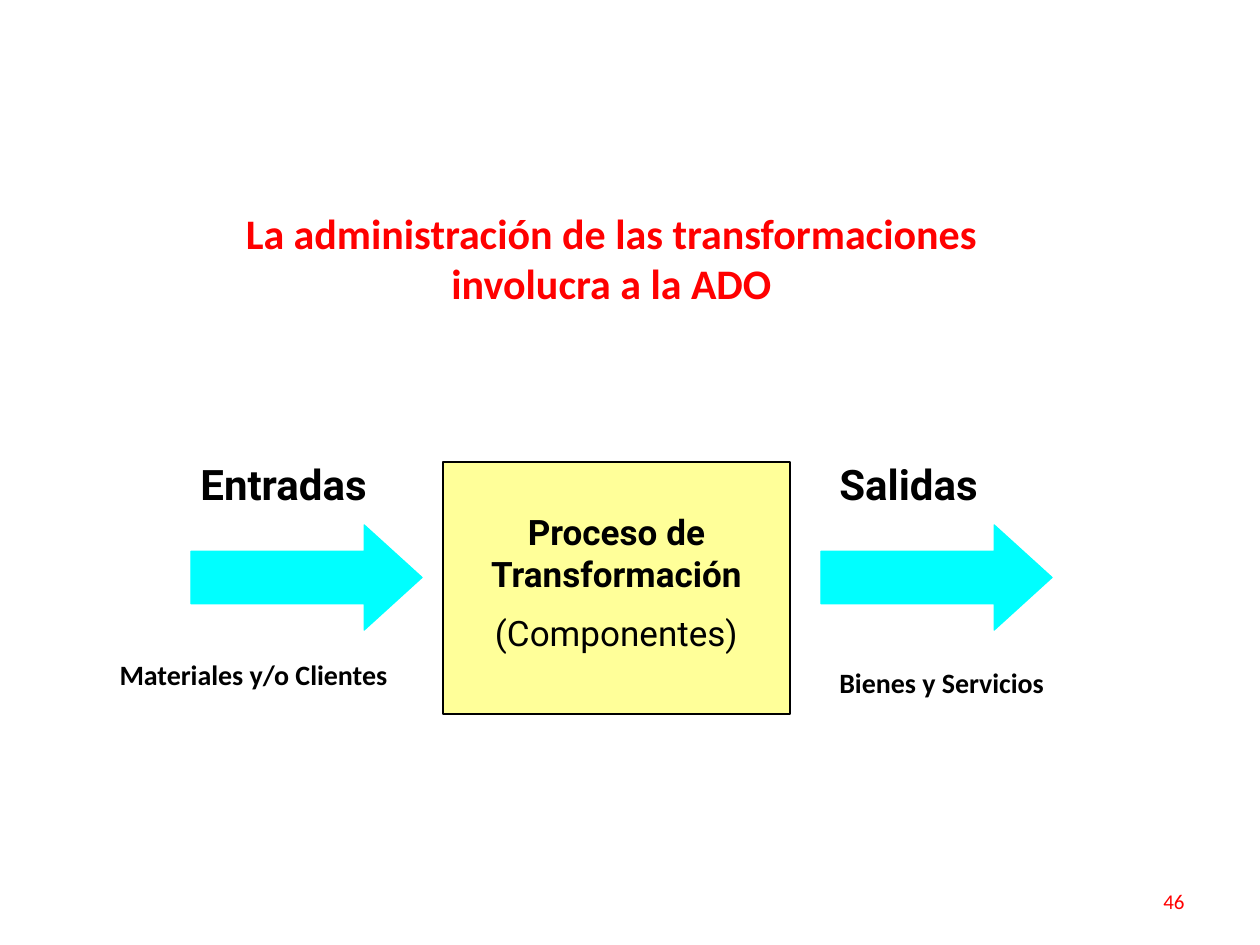
from dataclasses import dataclass

from pptx import Presentation
from pptx import util as u
from pptx.dml.color import RGBColor
from pptx.enum import shapes, text

EMU_PER_PX = 914400 / 126
COLORS = {"accent": "FF0000", "ink": "000000", "arrow": "00FFFF", "process": "FFFF99"}
LEFT, CENTER, RIGHT = text.PP_ALIGN.LEFT, text.PP_ALIGN.CENTER, text.PP_ALIGN.RIGHT
TOP, MIDDLE = text.MSO_ANCHOR.TOP, text.MSO_ANCHOR.MIDDLE


@dataclass
class Box:
    x: int
    y: int
    w: int
    h: int

    def emu(self) -> list[int]:
        return [u.Emu(round(v * EMU_PER_PX)) for v in (self.x, self.y, self.w, self.h)]


@dataclass
class Line:
    words: str
    size: int
    font: str = "Roboto"
    color: str = "ink"
    bold: bool = True
    align: int = LEFT
    before: int = 0


@dataclass
class Label:
    box: Box
    lines: list[Line]
    anchor: int = TOP
    wrap: bool = True


def rgb(name: str) -> RGBColor:
    return RGBColor.from_string(COLORS[name])


def write(tf, label: Label) -> None:
    tf.word_wrap = label.wrap
    tf.vertical_anchor = label.anchor
    tf.auto_size = text.MSO_AUTO_SIZE.NONE
    for i, line in enumerate(label.lines):
        p = tf.paragraphs[0] if i == 0 else tf.add_paragraph()
        p.alignment = line.align
        p.space_before = u.Pt(line.before)
        r = p.add_run()
        r.text = line.words
        style = {"name": line.font, "size": u.Pt(line.size), "bold": line.bold}
        for key, value in style.items():
            setattr(r.font, key, value)
        r.font.color.rgb = rgb(line.color)


def add_label(s, label: Label) -> None:
    write(s.shapes.add_textbox(*label.box.emu()).text_frame, label)


def add_block(s, kind: int, box: Box, fill: str, outline: str):
    sp = s.shapes.add_shape(kind, *box.emu())
    sp.shadow.inherit = False
    sp.fill.solid()
    sp.fill.fore_color.rgb = rgb(fill)
    sp.line.color.rgb = rgb(outline)
    sp.line.width = u.Pt(0.75)
    return sp


def main() -> None:
    prs = Presentation()
    prs.slide_width, prs.slide_height = u.Inches(10), u.Inches(7.5)
    s = prs.slides.add_slide(prs.slide_layouts[5])

    # Title
    title = Label(Box(178, 200, 867, 115),
                  [Line("La administración de las transformaciones involucra a la ADO",
                        24, "Calibri", "accent", align=CENTER)], MIDDLE)
    sp = s.shapes.title
    sp.left, sp.top, sp.width, sp.height = title.box.emu()
    write(sp.text_frame, title)

    # Input and output arrows around the process block
    for x in (191, 821):
        arrow = add_block(s, shapes.MSO_SHAPE.RIGHT_ARROW, Box(x, 525, 231, 105),
                          "arrow", "arrow")
        arrow.adjustments[1] = 0.55
    add_block(s, shapes.MSO_SHAPE.RECTANGLE, Box(443, 462, 347, 252), "process", "ink")

    # Labels and page number
    labels = [
        Label(Box(188, 452, 221, 63), [Line("Entradas", 24)]),
        Label(Box(827, 452, 221, 63), [Line("Salidas", 24)]),
        Label(Box(454, 504, 325, 160),
              [Line("Proceso de Transformación", 20, align=CENTER),
               Line("(Componentes)", 20, bold=False, align=CENTER, before=10)]),
        Label(Box(105, 651, 297, 47),
              [Line("Materiales y/o Clientes", 16, "Calibri", align=CENTER)]),
        Label(Box(827, 659, 233, 47),
              [Line("Bienes y Servicios", 16, "Calibri")], wrap=False),
        Label(Box(903, 876, 294, 50),
              [Line("46", 12, "Calibri", "accent", False, RIGHT)], MIDDLE),
    ]
    for label in labels:
        add_label(s, label)

    prs.save("out.pptx")


if __name__ == "__main__":
    main()
